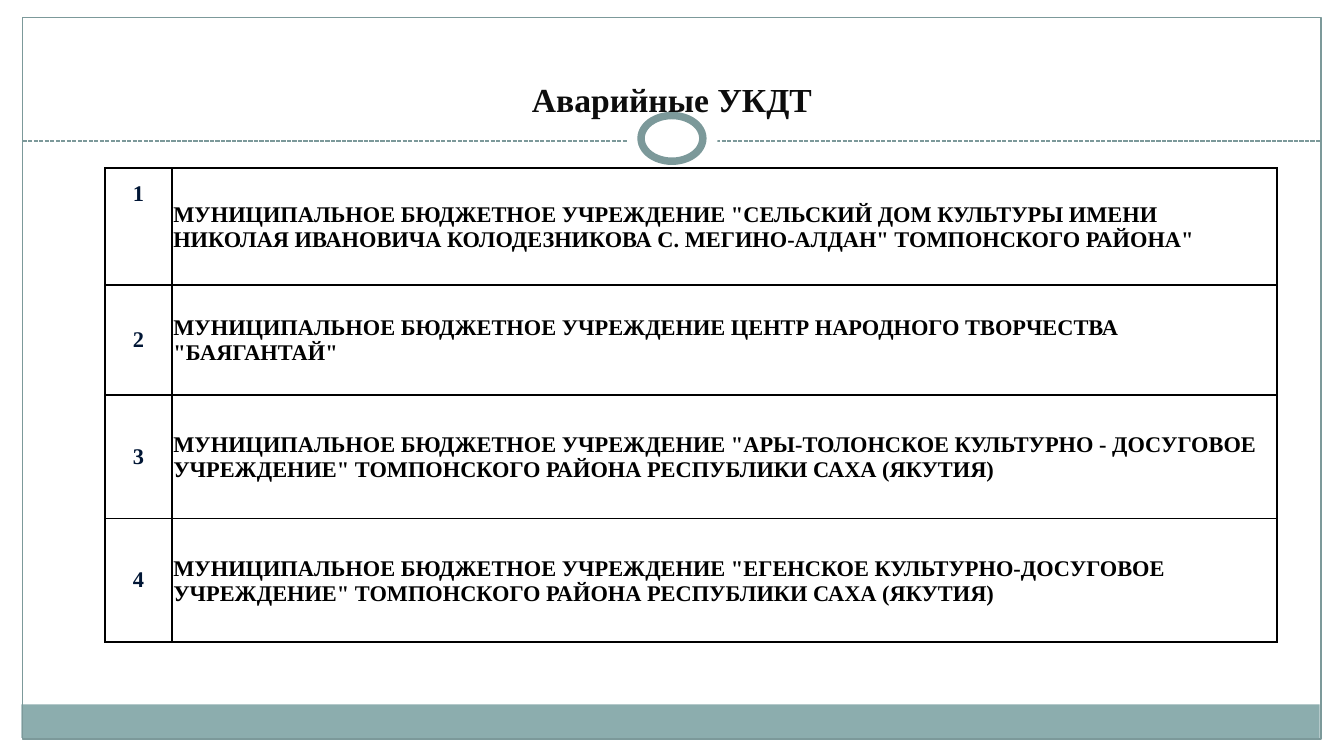
from typing import NamedTuple, Optional

from lxml import etree
from pptx import Presentation
from pptx.dml.color import RGBColor
from pptx.enum.dml import MSO_LINE
from pptx.enum.shapes import MSO_CONNECTOR, MSO_SHAPE
from pptx.enum.text import MSO_ANCHOR, PP_ALIGN
from pptx.oxml.ns import qn
from pptx.util import Inches, Pt

RECTANGLE, OVAL = MSO_SHAPE.RECTANGLE, MSO_SHAPE.OVAL
STRAIGHT, DASH = MSO_CONNECTOR.STRAIGHT, MSO_LINE.SQUARE_DOT
LEFT, CENTER = PP_ALIGN.LEFT, PP_ALIGN.CENTER
TOP, MIDDLE = MSO_ANCHOR.TOP, MSO_ANCHOR.MIDDLE

WHITE = RGBColor(0xFF, 0xFF, 0xFF)
BLACK = RGBColor(0x00, 0x00, 0x00)
NAVY = RGBColor(0x01, 0x16, 0x35)
TITLE_COLOR = RGBColor(0x0D, 0x0D, 0x0D)
BAND_COLOR = RGBColor(0x8C, 0xAD, 0xAE)
FRAME_COLOR = RGBColor(0x7C, 0x99, 0x9A)
FONT = "Times New Roman"
SLIDE_WIDTH = 10
SLIDE_HEIGHT = SLIDE_WIDTH * 9 / 16


class Decoration(NamedTuple):
    kind: MSO_SHAPE
    left: float
    top: float
    width: float
    height: float
    fill: Optional[RGBColor] = None
    line_width: float = 0


class Institution(NamedTuple):
    name: str
    row_height: float
    number_anchor: MSO_ANCHOR = MIDDLE


BAND_AND_FRAME = [
    Decoration(RECTANGLE, 0.16, 5.24, 9.66, 0.25, fill=BAND_COLOR),
    Decoration(RECTANGLE, 0.17, 0.13, 9.66, 5.37, line_width=0.75),
]
RING = [
    Decoration(OVAL, 4.67, 0.78, 0.67, 0.5, fill=WHITE),
    Decoration(OVAL, 4.77, 0.86, 0.46, 0.34, fill=WHITE, line_width=4),
]
PREFIX = "МУНИЦИПАЛЬНОЕ БЮДЖЕТНОЕ УЧРЕЖДЕНИЕ "
DISTRICT = " ТОМПОНСКОГО РАЙОНА"
REPUBLIC = " РЕСПУБЛИКИ САХА (ЯКУТИЯ)"
INSTITUTIONS = [
    Institution(
        '"СЕЛЬСКИЙ ДОМ КУЛЬТУРЫ ИМЕНИ НИКОЛАЯ ИВАНОВИЧА КОЛОДЕЗНИКОВА '
        'С. МЕГИНО-АЛДАН"' + DISTRICT + '"', 0.87, TOP),
    Institution('ЦЕНТР НАРОДНОГО ТВОРЧЕСТВА "БАЯГАНТАЙ"', 0.82),
    Institution('"АРЫ-ТОЛОНСКОЕ КУЛЬТУРНО - ДОСУГОВОЕ УЧРЕЖДЕНИЕ"'
                + DISTRICT + REPUBLIC, 0.92),
    Institution('"ЕГЕНСКОЕ КУЛЬТУРНО-ДОСУГОВОЕ УЧРЕЖДЕНИЕ"'
                + DISTRICT + REPUBLIC, 0.92),
]
COLUMN_WIDTHS = [0.5, 8.22]


def add_decoration(slide, item: Decoration) -> None:
    shape = slide.shapes.add_shape(
        item.kind, Inches(item.left), Inches(item.top),
        Inches(item.width), Inches(item.height))
    shape.shadow.inherit = False
    if item.fill is None:
        shape.fill.background()
    else:
        shape.fill.solid()
        shape.fill.fore_color.rgb = item.fill
    if item.line_width:
        shape.line.color.rgb = FRAME_COLOR
        shape.line.width = Pt(item.line_width)
    else:
        shape.line.fill.background()


def add_divider(slide) -> None:
    divider = slide.shapes.add_connector(
        STRAIGHT, Inches(0.17), Inches(1.05), Inches(9.83), Inches(1.05))
    divider.line.color.rgb = FRAME_COLOR
    divider.line.width = Pt(0.75)
    divider.line.dash_style = DASH
    etree.SubElement(divider.element.spPr, qn("a:effectLst"))


def write_text(paragraph, text: str, size: float, color: RGBColor,
               alignment: PP_ALIGN) -> None:
    paragraph.alignment = alignment
    run = paragraph.add_run()
    run.text = text
    run.font.name = FONT
    run.font.size = Pt(size)
    run.font.bold = True
    run.font.color.rgb = color


def set_margins(holder, left: float, top: float, right: float,
                bottom: float) -> None:
    holder.margin_left, holder.margin_top = Inches(left), Inches(top)
    holder.margin_right, holder.margin_bottom = Inches(right), Inches(bottom)


def place_title(slide) -> None:
    """Fill the title placeholder and bring it in front of the ring."""
    title = slide.shapes.title
    title.left, title.top = Inches(0.78), Inches(0.49)
    title.width, title.height = Inches(8.44), Inches(0.63)
    frame = title.text_frame
    frame.word_wrap = True
    frame.vertical_anchor = TOP
    set_margins(frame, 0.1, 0.1, 0.1, 0.1)
    write_text(frame.paragraphs[0], "Аварийные УКДТ", 18, TITLE_COLOR, CENTER)
    title.element.getparent().append(title.element)


def set_borders(cell) -> None:
    properties = cell._tc.get_or_add_tcPr()
    for position, side in enumerate(("a:lnL", "a:lnR", "a:lnT", "a:lnB")):
        border = etree.Element(qn(side), w=str(Pt(1)))
        fill = etree.SubElement(border, qn("a:solidFill"))
        etree.SubElement(fill, qn("a:srgbClr"), val=str(BLACK))
        properties.insert(position, border)


def fill_cell(cell, text: str, color: RGBColor, alignment: PP_ALIGN,
              anchor: MSO_ANCHOR) -> None:
    cell.fill.background()
    cell.vertical_anchor = anchor
    write_text(cell.text_frame.paragraphs[0], text, 12, color, alignment)
    set_borders(cell)


def add_institution_table(slide) -> None:
    table = slide.shapes.add_table(
        len(INSTITUTIONS), len(COLUMN_WIDTHS), Inches(0.78), Inches(1.25),
        Inches(sum(COLUMN_WIDTHS)),
        Inches(sum(item.row_height for item in INSTITUTIONS))).table
    table.first_row = table.horz_banding = False
    for column, width in zip(table.columns, COLUMN_WIDTHS):
        column.width = Inches(width)
    for index, item in enumerate(INSTITUTIONS):
        table.rows[index].height = Inches(item.row_height)
        number, name = table.cell(index, 0), table.cell(index, 1)
        set_margins(number, 0.1, 0.1, 0.1, 0.1)
        set_margins(name, 0.01, 0.01, 0.01, 0)
        fill_cell(number, str(index + 1), NAVY, CENTER, item.number_anchor)
        fill_cell(name, PREFIX + item.name, BLACK, LEFT, MIDDLE)


def main() -> None:
    presentation = Presentation()
    presentation.slide_width = Inches(SLIDE_WIDTH)
    presentation.slide_height = Inches(SLIDE_HEIGHT)
    slide = presentation.slides.add_slide(presentation.slide_layouts[5])
    for item in BAND_AND_FRAME:
        add_decoration(slide, item)
    add_divider(slide)
    for item in RING:
        add_decoration(slide, item)
    place_title(slide)
    add_institution_table(slide)
    presentation.save("out.pptx")


if __name__ == "__main__":
    main()
